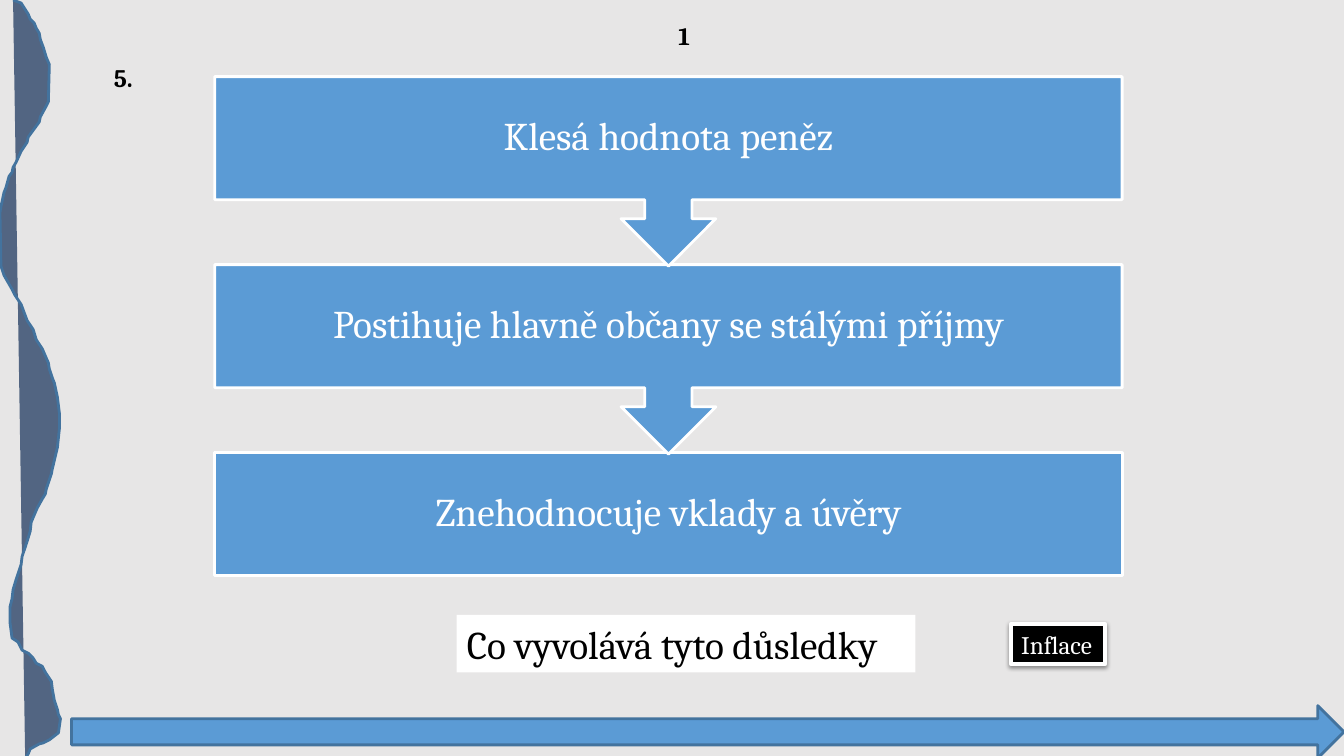
"""Builds the slide on the consequences of inflation."""
from lxml import etree
from pptx import Presentation
from pptx.dml.color import RGBColor
from pptx.enum.shapes import MSO_SHAPE
from pptx.enum.text import MSO_ANCHOR, MSO_AUTO_SIZE, PP_ALIGN
from pptx.oxml.ns import qn
from pptx.util import Inches, Pt

RECT, CALLOUT, ARROW = MSO_SHAPE.RECTANGLE, MSO_SHAPE.DOWN_ARROW_CALLOUT, MSO_SHAPE.RIGHT_ARROW
LEFT, CENTER = PP_ALIGN.LEFT, PP_ALIGN.CENTER
TOP, MIDDLE = MSO_ANCHOR.TOP, MSO_ANCHOR.MIDDLE
NO_FIT = MSO_AUTO_SIZE.NONE
TITLE_ONLY = 5

FONT = "Cambria"
COLORS = {
    "background": "E7E6E6", "ribbon": "526582", "blue": "5B9BD5",
    "edge": "43739E", "white": "FFFFFF", "black": "000000",
}

QUESTION = "Co vyvolává tyto důsledky"
ANSWER = "Inflace"
STEPS = ["Klesá hodnota peněz", "Postihuje hlavně občany se stálými příjmy",
         "Znehodnocuje vklady a úvěry"]
LABELS = [("5.", 1.03, 0.57, 0.41), ("1", 6.63, 0.15, 0.35)]

STEP_LEFT, STEP_TOP, STEP_WIDTH, STEP_HEIGHT = 2.13, 0.76, 9, 1.22
STEP_PITCH, CALLOUT_HEIGHT = 1.865, 1.88

RIBBON_UNIT = 0.01
RIBBON = [
    (13, 0), (21, 3), (28, 14), (30, 19), (34, 23), (36, 28), (39, 33), (40, 39),
    (43, 47), (46, 57), (49, 64), (48, 101), (46, 105), (40, 116), (39, 121),
    (28, 136), (27, 141), (21, 150), (16, 161), (13, 166), (12, 171), (9, 175),
    (6, 186), (4, 191), (1, 205), (0, 211), (1, 264), (4, 273), (12, 287),
    (15, 293), (21, 302), (27, 318), (33, 327), (36, 337), (42, 346), (48, 360),
    (49, 366), (52, 375), (54, 380), (57, 394), (59, 410), (59, 425), (57, 444),
    (52, 465), (51, 470), (46, 485), (45, 490), (42, 495), (37, 504), (31, 518),
    (30, 527), (27, 537), (25, 543), (22, 552), (21, 560), (18, 569), (16, 575),
    (13, 585), (12, 594), (10, 602), (10, 618), (12, 633), (18, 637), (22, 645),
    (28, 648), (33, 653), (36, 658), (42, 661), (45, 667), (51, 676), (52, 684),
    (54, 695), (57, 704), (58, 709), (60, 713), (58, 727), (49, 734), (43, 737),
    (39, 738), (30, 743), (28, 748), (25, 752),
]


def rgb(name):
    return RGBColor.from_string(COLORS[name])


def paint(sp, fill, line=None, width=2):
    sp.shadow.inherit = False
    sp.fill.solid()
    sp.fill.fore_color.rgb = rgb(fill)
    if line:
        sp.line.color.rgb = rgb(line)
        sp.line.width = Pt(width)
    else:
        sp.line.fill.background()


def write(sp, text, size, color, align=LEFT, anchor=TOP, wrap=False, bold=False):
    tf = sp.text_frame
    tf.auto_size = NO_FIT
    tf.word_wrap = wrap
    tf.vertical_anchor = anchor
    p = tf.paragraphs[0]
    p.alignment = align
    p.line_spacing = 0.9 if anchor == MIDDLE else 1.0
    r = p.add_run()
    r.text = text
    r.font.name = FONT
    r.font.size = Pt(size)
    r.font.bold = bold
    r.font.color.rgb = rgb(color)


def add_box(s, kind, left, top, width, height):
    return s.shapes.add_shape(kind, Inches(left), Inches(top), Inches(width), Inches(height))


def add_ribbon(s):
    fb = s.shapes.build_freeform(*RIBBON[0], scale=Inches(RIBBON_UNIT))
    fb.add_line_segments(RIBBON[1:], close=False)
    paint(fb.convert_to_shape(), "ribbon", "edge")


def add_step(s, index, text):
    last = index == len(STEPS) - 1
    kind, height = (RECT, STEP_HEIGHT) if last else (CALLOUT, CALLOUT_HEIGHT)
    sp = add_box(s, kind, STEP_LEFT, STEP_TOP + index * STEP_PITCH, STEP_WIDTH, height)
    paint(sp, "blue", "white")
    write(sp, text, 28, "white", CENTER, MIDDLE, wrap=True)
    tf = sp.text_frame
    tf.margin_left = tf.margin_right = tf.margin_top = tf.margin_bottom = Inches(0.22)


def add_shadow(sp):
    effects = sp._element.spPr.find(qn("a:effectLst"))
    shadow = etree.SubElement(effects, qn("a:outerShdw"), blurRad=str(Pt(3.1)),
                              dist=str(Pt(1.6)), dir="5400000", rotWithShape="0")
    color = etree.SubElement(shadow, qn("a:srgbClr"), val=COLORS["black"])
    etree.SubElement(color, qn("a:alpha"), val="38000")


def main():
    prs = Presentation()
    prs.slide_width, prs.slide_height = Inches(13.33), Inches(7.5)
    s = prs.slides.add_slide(prs.slide_layouts[TITLE_ONLY])
    s.background.fill.solid()
    s.background.fill.fore_color.rgb = rgb("background")

    title = s.shapes.title
    title.left, title.top = Inches(4.53), Inches(6.1)
    title.width, title.height = Inches(4.55), Inches(0.57)
    title.fill.solid()
    title.fill.fore_color.rgb = rgb("white")
    write(title, QUESTION, 28, "black", wrap=True)

    add_ribbon(s)
    paint(add_box(s, ARROW, 0.71, 7, 12.62, 0.52), "blue", "edge")

    for text, left, top, width in LABELS:
        tb = s.shapes.add_textbox(Inches(left), Inches(top), Inches(width), Inches(0.4))
        write(tb, text, 18, "black", bold=True)

    for index, text in reversed(list(enumerate(STEPS))):
        add_step(s, index, text)

    answer = add_box(s, RECT, 10.03, 6.19, 0.93, 0.4)
    paint(answer, "black", "white", 3)
    add_shadow(answer)
    write(answer, ANSWER, 18, "white")

    prs.save("out.pptx")


if __name__ == "__main__":
    main()
